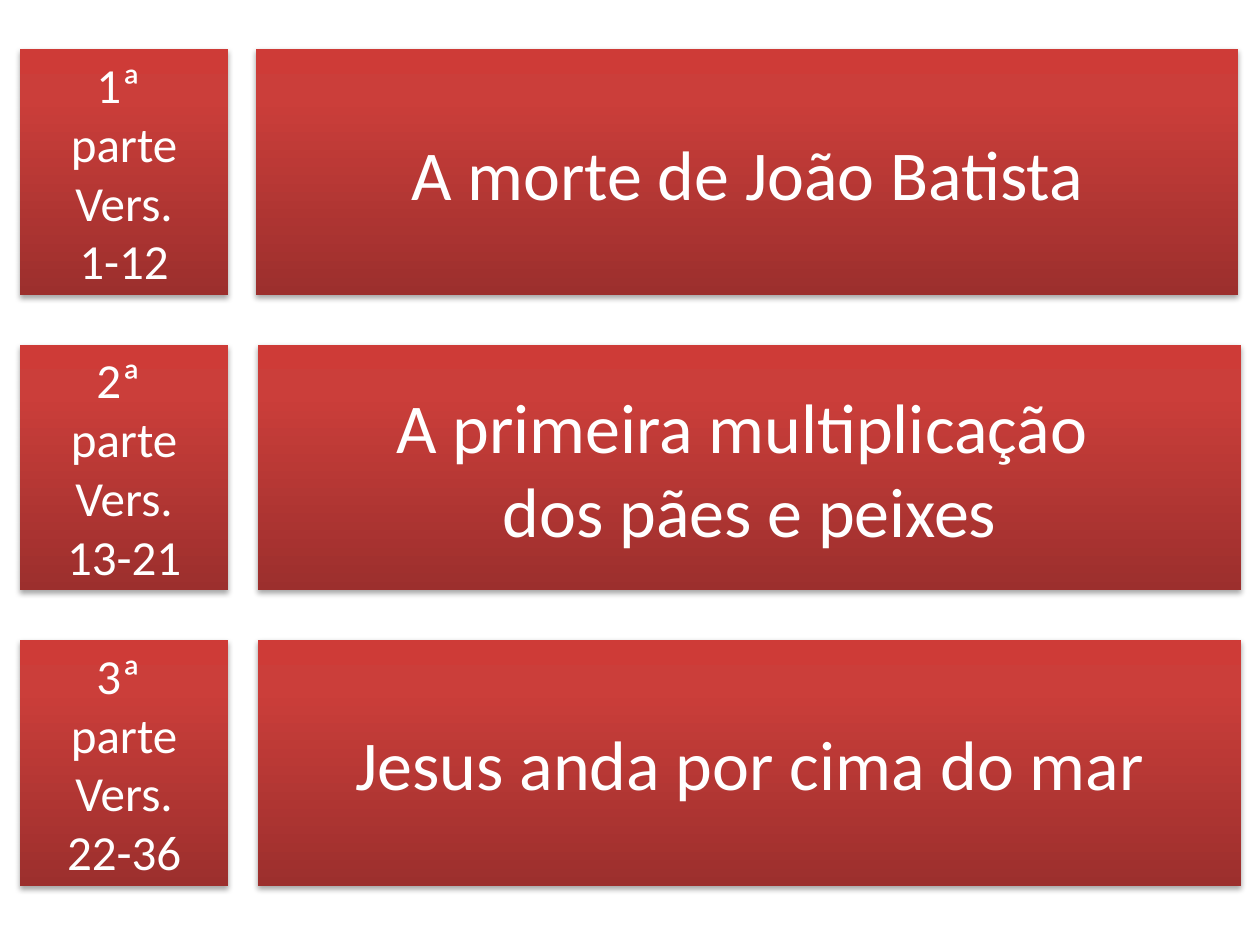
from lxml import etree
from pptx import Presentation
from pptx.dml.color import RGBColor
from pptx.enum.shapes import MSO_SHAPE
from pptx.enum.text import MSO_ANCHOR, PP_ALIGN
from pptx.oxml.ns import qn
from pptx.util import Inches, Pt

RED_STOPS = [(0, "9C2F2D"), (80, "CB3E3A"), (100, "CE3B37")]
LABEL_FONT = {"name": "Calibri", "size": Pt(28)}
TITLE_FONT = {"name": "Calibri", "size": Pt(40)}

ROW_TOP, ROW_STEP, ROW_HEIGHT = 0.39, 2.345, 1.95
LABEL_LEFT, LABEL_WIDTH, TITLE_WIDTH = 0.16, 1.65, 7.8

# Title left edge, label lines, title lines
PARTS = [
    (2.03, ["1ª ", "parte", "Vers.", "1-12"], ["A morte de João Batista"]),
    (2.05, ["2ª ", "parte", "Vers.", "13-21"],
     ["A primeira multiplicação ", "dos pães e peixes"]),
    (2.05, ["3ª ", "parte", "Vers.", "22-36"], ["Jesus anda por cima do mar"]),
]


def rgb(color):
    return RGBColor.from_string(color)


def add_color(parent, color):
    return etree.SubElement(parent, qn("a:srgbClr"), val=color)


def style_red(sp):
    # Gradient running from dark at the bottom to bright at the top
    sp.fill.gradient()
    sp.fill.gradient_angle = 90
    stops = sp.element.spPr.find(".//" + qn("a:gsLst"))
    for stop in list(stops):
        stops.remove(stop)
    for percent, color in RED_STOPS:
        add_color(etree.SubElement(stops, qn("a:gs"), pos=str(percent * 1000)), color)
    sp.line.fill.background()

    # Soft shadow below
    sp.shadow.inherit = False
    effects = sp.element.spPr.find(qn("a:effectLst"))
    shadow = etree.SubElement(
        effects, qn("a:outerShdw"), blurRad=str(Pt(3.1)), dist=str(Pt(1.8)),
        dir="5400000", rotWithShape="0")
    etree.SubElement(add_color(shadow, "000000"), qn("a:alpha"), val="35000")


def add_box(s, left, top, width, height, lines, font):
    sp = s.shapes.add_shape(MSO_SHAPE.RECTANGLE, Inches(left), Inches(top),
                            Inches(width), Inches(height))
    style_red(sp)
    tf = sp.text_frame
    tf.word_wrap = True
    tf.vertical_anchor = MSO_ANCHOR.MIDDLE
    for i, line in enumerate(lines):
        p = tf.paragraphs[0] if i == 0 else tf.add_paragraph()
        p.alignment = PP_ALIGN.CENTER
        r = p.add_run()
        r.text = line
        for name, value in font.items():
            setattr(r.font, name, value)
        r.font.color.rgb = rgb("FFFFFF")


def add_part(s, top, height, title_left, label, title):
    add_box(s, LABEL_LEFT, top, LABEL_WIDTH, height, label, LABEL_FONT)
    add_box(s, title_left, top, TITLE_WIDTH, height, title, TITLE_FONT)


def main():
    prs = Presentation()
    prs.slide_width, prs.slide_height = Inches(10), Inches(7.5)
    s = prs.slides.add_slide(prs.slide_layouts[6])
    s.background.fill.solid()
    s.background.fill.fore_color.rgb = rgb("FFFFFF")

    # One row for each part of the chapter
    for i, (title_left, label, title) in enumerate(PARTS):
        add_part(s, ROW_TOP + i * ROW_STEP, ROW_HEIGHT, title_left, label, title)
    prs.save("out.pptx")


if __name__ == "__main__":
    main()
